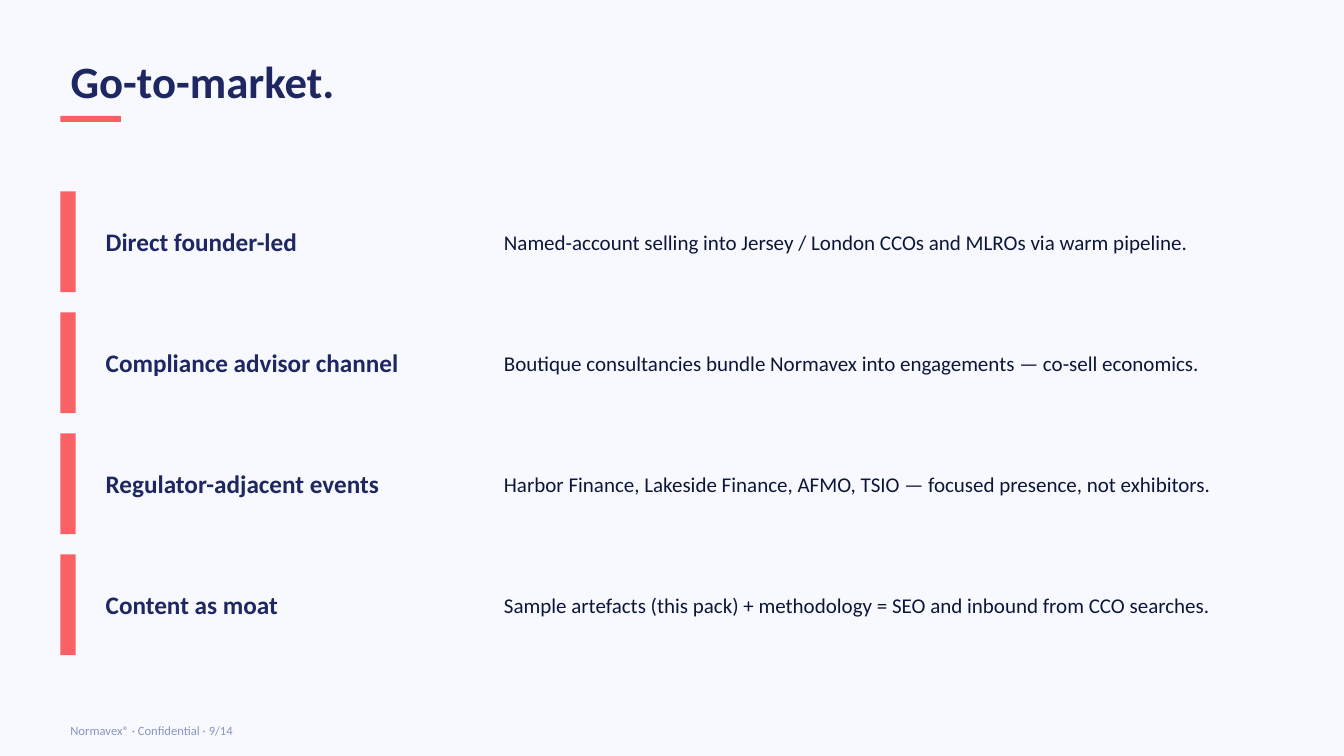
import pptx
import pptx.dml.color
import pptx.enum.shapes
import pptx.enum.text
import pptx.util
from dataclasses import dataclass

# Content
TITLE = "Go-to-market."
CHANNELS = [
    ("Direct founder-led",
     "Named-account selling into Jersey / London CCOs and MLROs via warm pipeline."),
    ("Compliance advisor channel",
     "Boutique consultancies bundle Normavex into engagements — co-sell economics."),
    ("Regulator-adjacent events",
     "Harbor Finance, Lakeside Finance, AFMO, TSIO — focused presence, not exhibitors."),
    ("Content as moat",
     "Sample artefacts (this pack) + methodology = SEO and inbound from CCO searches."),
]
FOOTER = "Normavex® · Confidential · 9/14"


@dataclass(frozen=True)
class Theme:
    font: str = "Calibri"
    background: str = "F7F9FF"
    heading: str = "1E2761"
    body: str = "0E1638"
    muted: str = "8B96BE"
    accent: str = "F96167"
    title_pt: int = 32
    channel_pt: int = 18
    body_pt: int = 15
    footer_pt: int = 9


THEME = Theme()

# Grid, in inches
WIDTH, HEIGHT = 13.33, 7.5
MARGIN = 0.6
FULL_W = 12
ROWS_TOP, ROW_H, ROW_GAP = 1.9, 1, 0.2
BAR_W = 0.15
NAME_X, NAME_W = 0.95, 3.8
DETAIL_X, DETAIL_W = 4.9, 7.8


def rgb(value):
    return pptx.dml.color.RGBColor.from_string(value)


def inches(*box):
    return [pptx.util.Inches(v) for v in box]


def write(sp, text, size, color, bold=False):
    tf = sp.text_frame
    tf.word_wrap = True
    tf.auto_size = pptx.enum.text.MSO_AUTO_SIZE.NONE
    tf.vertical_anchor = pptx.enum.text.MSO_ANCHOR.MIDDLE
    p = tf.paragraphs[0]
    p.text = text
    p.alignment = pptx.enum.text.PP_ALIGN.LEFT
    p.font.name = THEME.font
    p.font.size = pptx.util.Pt(size)
    p.font.bold = bold
    p.font.color.rgb = rgb(color)


def add_text(slide, box, *style, **options):
    write(slide.shapes.add_textbox(*inches(*box)), *style, **options)


def add_bar(slide, box):
    sp = slide.shapes.add_shape(
        pptx.enum.shapes.MSO_SHAPE.RECTANGLE, *inches(*box))
    sp.shadow.inherit = False
    sp.fill.solid()
    sp.fill.fore_color.rgb = rgb(THEME.accent)
    sp.line.fill.background()


def main():
    prs = pptx.Presentation()
    prs.slide_width, prs.slide_height = inches(WIDTH, HEIGHT)
    slide = prs.slides.add_slide(prs.slide_layouts.get_by_name("Title Only"))
    slide.background.fill.solid()
    slide.background.fill.fore_color.rgb = rgb(THEME.background)

    # Title with accent underline
    title = slide.shapes.title
    title.left, title.top, title.width, title.height = inches(
        MARGIN, 0.45, FULL_W, 0.7)
    write(title, TITLE, THEME.title_pt, THEME.heading, bold=True)
    add_bar(slide, (MARGIN, 1.15, 0.6, 0.06))

    # One row per sales channel
    for i, (name, detail) in enumerate(CHANNELS):
        y = ROWS_TOP + i * (ROW_H + ROW_GAP)
        add_bar(slide, (MARGIN, y, BAR_W, ROW_H))
        add_text(slide, (NAME_X, y, NAME_W, ROW_H), name,
                 THEME.channel_pt, THEME.heading, bold=True)
        add_text(slide, (DETAIL_X, y, DETAIL_W, ROW_H), detail,
                 THEME.body_pt, THEME.body)

    # Footer
    add_text(slide, (MARGIN, 7.1, FULL_W, 0.3), FOOTER,
             THEME.footer_pt, THEME.muted)

    prs.save("out.pptx")


if __name__ == "__main__":
    main()
